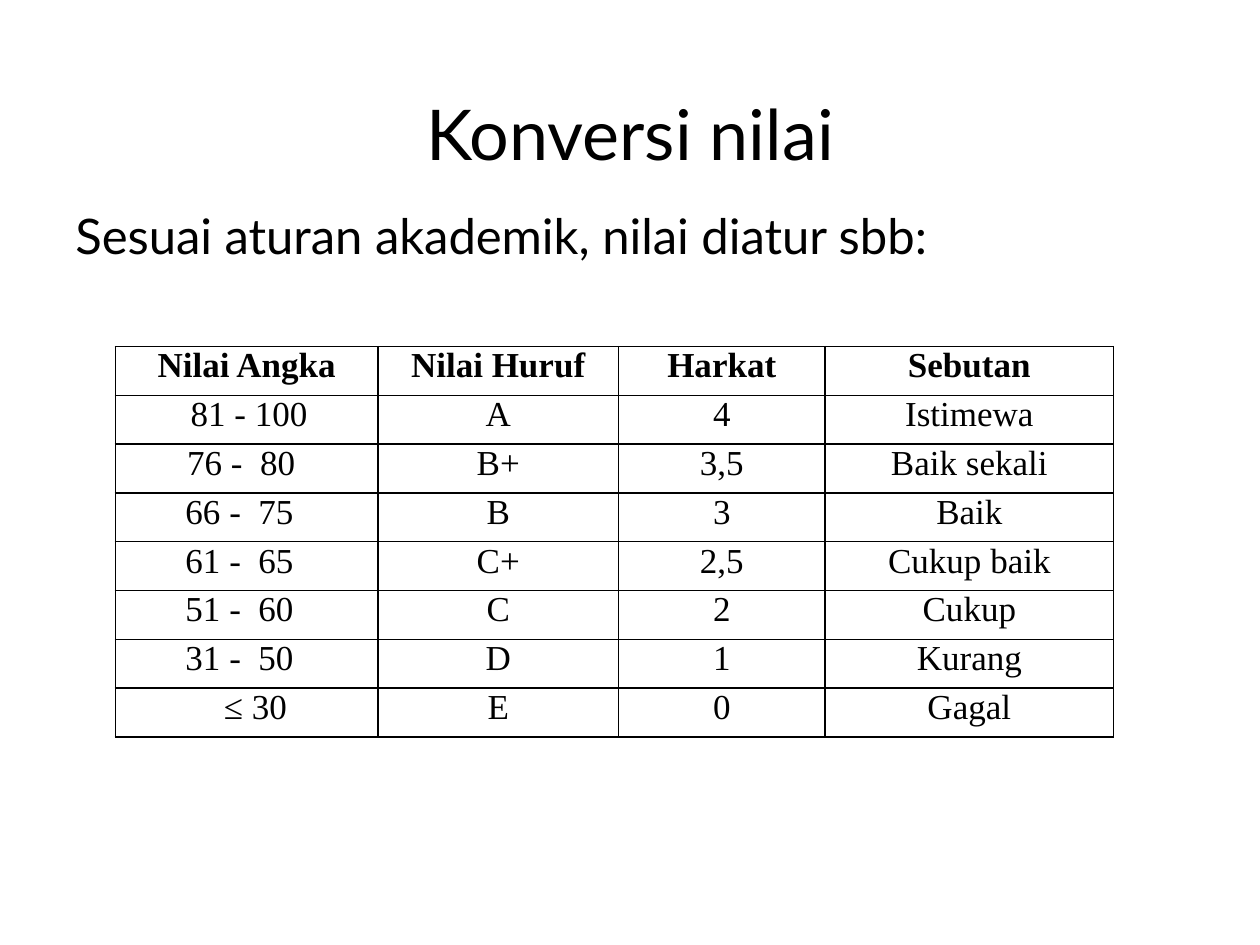
from lxml import etree
from pptx import Presentation
from pptx.dml.color import RGBColor
from pptx.enum.text import MSO_ANCHOR, MSO_AUTO_SIZE, PP_ALIGN
from pptx.oxml.ns import qn
from pptx.util import Pt

CENTER, LEFT = PP_ALIGN.CENTER, PP_ALIGN.LEFT
MIDDLE, TOP = MSO_ANCHOR.MIDDLE, MSO_ANCHOR.TOP
FIXED_SIZE = MSO_AUTO_SIZE.NONE
BLACK = RGBColor(0x00, 0x00, 0x00)
TITLE_ONLY = 5

TITLE_FORMAT = {"name": "Lato", "size": Pt(40), "bold": False}
BODY_FORMAT = {"name": "Lato", "size": Pt(28), "bold": False}
CELL_FORMAT = {"name": "Times New Roman", "size": Pt(20), "bold": False}
HEADER_FORMAT = {**CELL_FORMAT, "bold": True}

CELL_MARGIN = 5
COLUMN_WIDTHS = [150, 137.5, 118, 165]
ROW_HEIGHT = 27.9
HEADINGS = ["Nilai Angka", "Nilai Huruf", "Harkat", "Sebutan"]
# Left indent of the score range, then the row's texts
GRADES = [
    (38, ["81 - 100", "A", "4", "Istimewa"]),
    (36, ["76 -  80", "B+", "3,5", "Baik sekali"]),
    (35, ["66 -  75", "B", "3", "Baik"]),
    (35, ["61 -  65", "C+", "2,5", "Cukup baik"]),
    (35, ["51 -  60", "C", "2", "Cukup"]),
    (35, ["31 -  50", "D", "1", "Kurang"]),
    (57, ["≤ 30", "E", "0", "Gagal"]),
]


class SlideBuilder:
    def __init__(self, slide, color):
        self.slide = slide
        self.color = color

    def set_text(self, text_frame, text, font_format, alignment):
        paragraph = text_frame.paragraphs[0]
        paragraph.alignment = alignment
        run = paragraph.add_run()
        run.text = text
        for attribute, value in font_format.items():
            setattr(run.font, attribute, value)
        run.font.color.rgb = self.color

    def title(self, text, left, top, width, height):
        shape = self.slide.shapes.title
        position = {"left": left, "top": top, "width": width, "height": height}
        for attribute, value in position.items():
            setattr(shape, attribute, Pt(value))
        shape.text_frame.auto_size = FIXED_SIZE
        shape.text_frame.vertical_anchor = MIDDLE
        self.set_text(shape.text_frame, text, TITLE_FORMAT, CENTER)

    def text(self, text, left, top, width, height):
        shape = self.slide.shapes.add_textbox(Pt(left), Pt(top), Pt(width), Pt(height))
        shape.text_frame.word_wrap = True
        shape.text_frame.vertical_anchor = TOP
        self.set_text(shape.text_frame, text, BODY_FORMAT, LEFT)

    def border(self, cell):
        properties = cell._tc.get_or_add_tcPr()
        for side in ("lnL", "lnR", "lnT", "lnB"):
            line = etree.SubElement(properties, qn(f"a:{side}"), w=str(Pt(1)))
            fill = etree.SubElement(line, qn("a:solidFill"))
            etree.SubElement(fill, qn("a:srgbClr"), val=str(self.color))

    def cell(self, cell, text, font_format, indent=None):
        """Fill a cell; an indent makes it left-aligned, otherwise it is centred."""
        margins = {"margin_left": CELL_MARGIN + (indent or 0),
                   "margin_right": CELL_MARGIN, "margin_top": 0, "margin_bottom": 0}
        for attribute, value in margins.items():
            setattr(cell, attribute, Pt(value))
        cell.vertical_anchor = TOP
        self.border(cell)
        cell.fill.background()
        self.set_text(cell.text_frame, text, font_format, CENTER if indent is None else LEFT)

    def table(self, headings, grades, left, top):
        row_count = len(grades) + 1
        table = self.slide.shapes.add_table(
            row_count, len(headings), Pt(left), Pt(top),
            Pt(sum(COLUMN_WIDTHS)), Pt(ROW_HEIGHT * row_count)).table
        table.horz_banding = False
        table.first_row = False
        for column, width in zip(table.columns, COLUMN_WIDTHS):
            column.width = Pt(width)
        for row in table.rows:
            row.height = Pt(ROW_HEIGHT)
        for column, heading in enumerate(headings):
            self.cell(table.cell(0, column), heading, HEADER_FORMAT)
        for row, (indent, texts) in enumerate(grades, start=1):
            for column, text in enumerate(texts):
                self.cell(table.cell(row, column), text, CELL_FORMAT,
                          indent if column == 0 else None)


def main():
    presentation = Presentation()
    presentation.slide_width, presentation.slide_height = Pt(720), Pt(540)
    slide = presentation.slides.add_slide(presentation.slide_layouts[TITLE_ONLY])
    builder = SlideBuilder(slide, BLACK)
    builder.title("Konversi nilai", 36, 48, 648, 56)
    builder.text("Sesuai aturan akademik, nilai diatur sbb:", 36, 114, 648, 354)
    builder.table(HEADINGS, GRADES, 66, 198)
    presentation.save("out.pptx")


if __name__ == "__main__":
    main()
